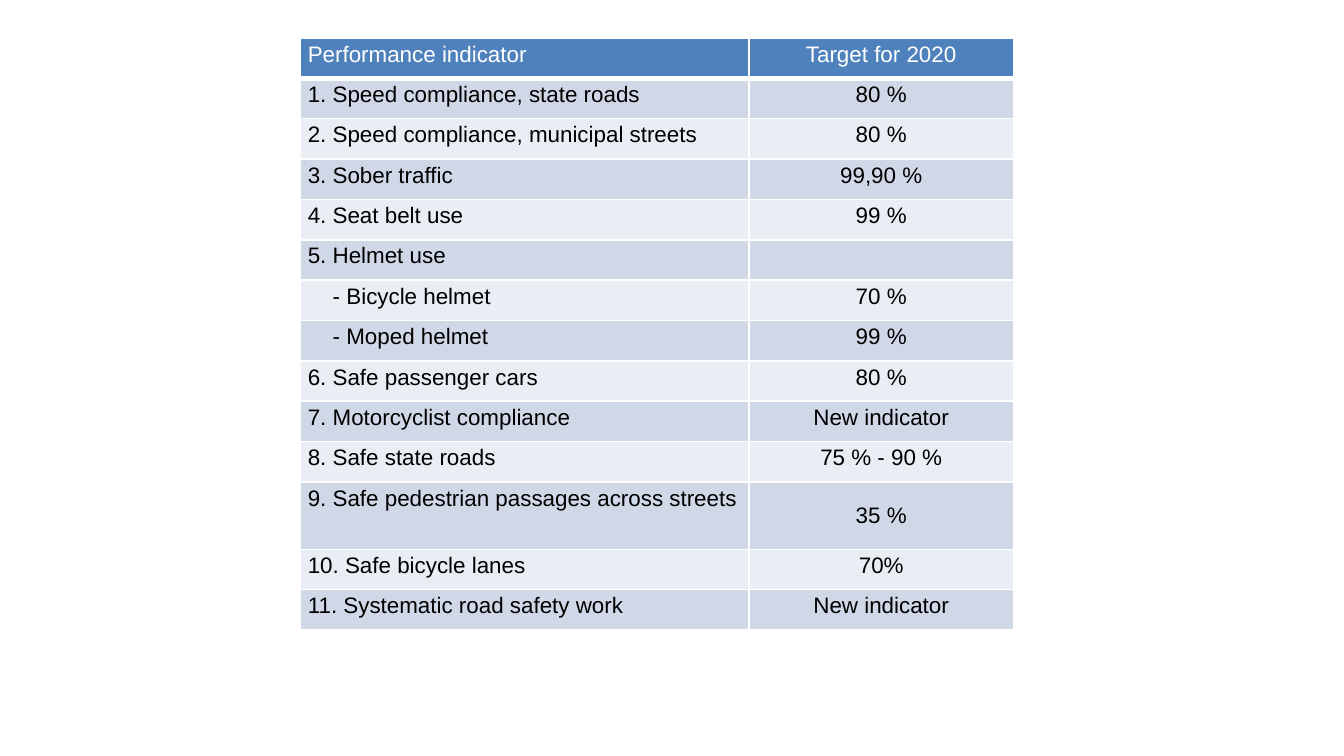
from dataclasses import dataclass

from lxml import etree
from pptx import Presentation
from pptx.dml.color import RGBColor
from pptx.enum import text
from pptx.oxml import ns
from pptx.util import Pt


@dataclass(frozen=True)
class Theme:
    font: str = "Arial"
    size: float = 12
    header_fill: str = "4F81BD"
    header_ink: str = "FFFFFF"
    ink: str = "000000"
    bands: tuple[str, str] = ("D0D8E8", "E9EDF4")
    rule: str = "FFFFFF"
    rule_width: float = 1
    header_rule_width: float = 3
    side_margin: float = 4.1
    end_margin: float = 2.05


@dataclass(frozen=True)
class Indicator:
    name: str
    target: str
    indent: float = 0
    height: float = 21.65
    target_anchor: text.MSO_ANCHOR = text.MSO_ANCHOR.TOP


THEME = Theme()
SUB_INDENT = 13.34
LEFT, TOP = 160.8, 20.3
COLUMN_WIDTHS = (240.5, 141.6)

ROWS = [
    Indicator("Performance indicator", "Target for 2020"),
    Indicator("1. Speed compliance, state roads", "80 %"),
    Indicator("2. Speed compliance, municipal streets", "80 %"),
    Indicator("3. Sober traffic", "99,90 %"),
    Indicator("4. Seat belt use", "99 %"),
    Indicator("5. Helmet use", ""),
    Indicator("- Bicycle helmet", "70 %", indent=SUB_INDENT),
    Indicator("- Moped helmet", "99 %", indent=SUB_INDENT),
    Indicator("6. Safe passenger cars", "80 %"),
    Indicator("7. Motorcyclist compliance", "New indicator"),
    Indicator("8. Safe state roads", "75 % - 90 %"),
    Indicator("9. Safe pedestrian passages across streets", "35 %",
              height=36.1, target_anchor=text.MSO_ANCHOR.MIDDLE),
    Indicator("10. Safe bicycle lanes", "70%"),
    Indicator("11. Systematic road safety work", "New indicator"),
]


def draw_borders(cell, is_header: bool) -> None:
    properties = cell._tc.get_or_add_tcPr()
    for side in ("lnL", "lnR", "lnT", "lnB"):
        heavy = is_header and side == "lnB"
        width = THEME.header_rule_width if heavy else THEME.rule_width
        line = etree.SubElement(properties, ns.qn(f"a:{side}"), w=str(Pt(width)))
        fill = etree.SubElement(line, ns.qn("a:solidFill"))
        etree.SubElement(fill, ns.qn("a:srgbClr"), val=THEME.rule)


def write_cell(cell, words: str, ink: str, centred: bool, indent: float) -> None:
    para = cell.text_frame.paragraphs[0]
    para.alignment = text.PP_ALIGN.CENTER if centred else text.PP_ALIGN.LEFT
    if indent:
        para._p.get_or_add_pPr().set("marL", str(Pt(indent)))
    if not words:
        # Keep the empty line as low as the written ones
        etree.SubElement(para._p, ns.qn("a:endParaRPr"), sz=str(THEME.size * 100))
        return
    span = para.add_run()
    span.text = words
    span.font.name = THEME.font
    span.font.size = Pt(THEME.size)
    span.font.bold = False
    span.font.color.rgb = RGBColor.from_string(ink)


def style_cell(cell, fill: str, is_header: bool) -> None:
    cell.margin_left = cell.margin_right = Pt(THEME.side_margin)
    cell.margin_top = cell.margin_bottom = Pt(THEME.end_margin)
    draw_borders(cell, is_header)
    cell.fill.solid()
    cell.fill.fore_color.rgb = RGBColor.from_string(fill)


def draw_table(page, rows: list[Indicator]) -> None:
    height = sum(row.height for row in rows)
    table = page.shapes.add_table(
        len(rows), len(COLUMN_WIDTHS), Pt(LEFT), Pt(TOP),
        Pt(sum(COLUMN_WIDTHS)), Pt(height)).table
    for column, width in zip(table.columns, COLUMN_WIDTHS):
        column.width = Pt(width)
    for index, row in enumerate(rows):
        is_header = index == 0
        fill = THEME.header_fill if is_header else THEME.bands[(index - 1) % 2]
        ink = THEME.header_ink if is_header else THEME.ink
        table.rows[index].height = Pt(row.height)
        name, target = table.cell(index, 0), table.cell(index, 1)
        for cell in (name, target):
            style_cell(cell, fill, is_header)
        target.vertical_anchor = row.target_anchor
        write_cell(name, row.name, ink, centred=False, indent=row.indent)
        write_cell(target, row.target, ink, centred=True, indent=0)


def main() -> None:
    # Page
    deck = Presentation()
    deck.slide_width, deck.slide_height = Pt(720), Pt(405)
    page = deck.slides.add_slide(deck.slide_layouts[6])

    # Indicator table
    draw_table(page, ROWS)
    deck.save("out.pptx")


if __name__ == "__main__":
    main()
